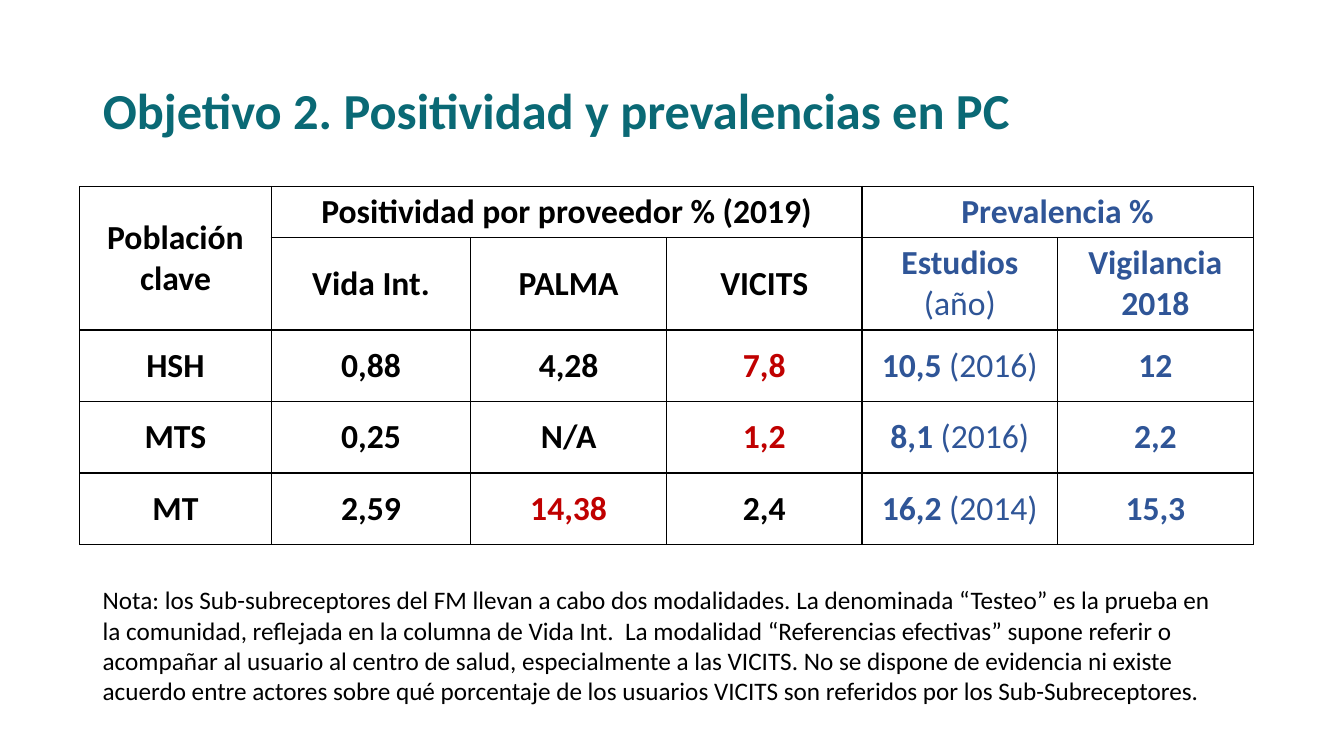
import dataclasses
import typing

import lxml.etree
import pptx
import pptx.dml.color
import pptx.enum.text
import pptx.oxml.ns
import pptx.util

PX = 9144  # EMU per px, 100 px to the inch
FONT = "Calibri"
TEAL = pptx.dml.color.RGBColor(0x0A, 0x69, 0x75)
BLACK = pptx.dml.color.RGBColor(0x00, 0x00, 0x00)
BLUE = pptx.dml.color.RGBColor(0x2F, 0x55, 0x97)
RED = pptx.dml.color.RGBColor(0xC0, 0x00, 0x00)

ALIGN = pptx.enum.text.PP_ALIGN
ANCHOR = pptx.enum.text.MSO_ANCHOR
AUTO_SIZE = pptx.enum.text.MSO_AUTO_SIZE

TITLE = "Objetivo 2. Positividad y prevalencias en PC"
NOTE = (
    "Nota: los Sub-subreceptores del FM llevan a cabo dos modalidades. "
    "La denominada “Testeo” es la prueba en la comunidad, reflejada en la "
    "columna de Vida Int.  La modalidad “Referencias efectivas” supone referir "
    "o acompañar al usuario al centro de salud, especialmente a las VICITS. "
    "No se dispone de evidencia ni existe acuerdo entre actores sobre qué "
    "porcentaje de los usuarios VICITS son referidos por los Sub-Subreceptores."
)
COL_WIDTHS = [190, 198, 194, 194, 194, 194]
ROW_HEIGHTS = [51, 91, 71, 71, 71]


@dataclasses.dataclass(frozen=True)
class Entry:
    """A table cell: bold text, then an optional regular-weight part."""
    row: int
    col: int
    bold: str
    color: pptx.dml.color.RGBColor = BLACK
    regular: str = ""
    rows: int = 1
    cols: int = 1


@dataclasses.dataclass(frozen=True)
class Population:
    name: str
    positivity: tuple[str, str, str]
    highest: int
    study: str
    year: str
    surveillance: str


HEADERS = [
    Entry(0, 0, "Población clave", rows=2),
    Entry(0, 1, "Positividad por proveedor % (2019)", cols=3),
    Entry(0, 4, "Prevalencia %", BLUE, cols=2),
    Entry(1, 1, "Vida Int."),
    Entry(1, 2, "PALMA"),
    Entry(1, 3, "VICITS"),
    Entry(1, 4, "Estudios ", BLUE, "(año)"),
    Entry(1, 5, "Vigilancia 2018", BLUE),
]
POPULATIONS = [
    Population("HSH", ("0,88", "4,28", "7,8"), 2, "10,5", "2016", "12"),
    Population("MTS", ("0,25", "N/A", "1,2"), 2, "8,1", "2016", "2,2"),
    Population("MT", ("2,59", "14,38", "2,4"), 1, "16,2", "2014", "15,3"),
]


def population_entries(row: int, pop: Population) -> typing.Iterator[Entry]:
    yield Entry(row, 0, pop.name)
    for i, value in enumerate(pop.positivity):
        yield Entry(row, i + 1, value, RED if i == pop.highest else BLACK)
    yield Entry(row, 4, f"{pop.study} ", BLUE, f"({pop.year})")
    yield Entry(row, 5, pop.surveillance, BLUE)


def set_attrs(target: typing.Any, attrs: dict[str, typing.Any]) -> None:
    for name, value in attrs.items():
        setattr(target, name, value)


def add_run(p: typing.Any, text: str, size: int,
            color: pptx.dml.color.RGBColor, bold: bool) -> None:
    r = p.add_run()
    r.text = text
    set_attrs(r.font, {"name": FONT, "size": pptx.util.Pt(size), "bold": bold})
    r.font.color.rgb = color


def place(sp: typing.Any, left: int, top: int, width: int, height: int) -> None:
    set_attrs(sp, {"left": left * PX, "top": top * PX,
                   "width": width * PX, "height": height * PX})


def add_borders(cell: typing.Any) -> None:
    qn = pptx.oxml.ns.qn
    props = cell._tc.get_or_add_tcPr()
    for i, side in enumerate(("lnL", "lnR", "lnT", "lnB")):
        line = lxml.etree.Element(qn(f"a:{side}"), w=str(pptx.util.Pt(1)))
        fill = lxml.etree.SubElement(line, qn("a:solidFill"))
        lxml.etree.SubElement(fill, qn("a:srgbClr"), val=str(BLACK))
        props.insert(i, line)


def fill_entry(table: typing.Any, entry: Entry) -> None:
    cell = table.cell(entry.row, entry.col)
    if entry.rows > 1 or entry.cols > 1:
        cell.merge(table.cell(entry.row + entry.rows - 1,
                              entry.col + entry.cols - 1))
    p = cell.text_frame.paragraphs[0]
    p.alignment = ALIGN.CENTER
    add_run(p, entry.bold, 24, entry.color, True)
    if entry.regular:
        add_run(p, entry.regular, 24, entry.color, False)


def add_title(s: typing.Any) -> None:
    sp = s.shapes.title
    place(sp, 92, 40, 1067, 145)
    set_attrs(sp.text_frame, {"vertical_anchor": ANCHOR.MIDDLE,
                              "word_wrap": True,
                              "auto_size": AUTO_SIZE.NONE})
    p = sp.text_frame.paragraphs[0]
    set_attrs(p, {"alignment": ALIGN.LEFT, "line_spacing": 0.9})
    add_run(p, TITLE, 36, TEAL, True)


def add_prevalence_table(s: typing.Any) -> None:
    frame = s.shapes.add_table(len(ROW_HEIGHTS), len(COL_WIDTHS), 79 * PX, 185 * PX,
                               sum(COL_WIDTHS) * PX, sum(ROW_HEIGHTS) * PX)
    table = frame.table
    set_attrs(table, {"first_row": False, "horz_banding": False})
    for column, width in zip(table.columns, COL_WIDTHS):
        column.width = width * PX
    for row, height in zip(table.rows, ROW_HEIGHTS):
        row.height = height * PX
    for cell in table.iter_cells():
        cell.fill.background()
        cell.vertical_anchor = ANCHOR.MIDDLE
        add_borders(cell)
    for entry in HEADERS:
        fill_entry(table, entry)
    for row, pop in enumerate(POPULATIONS, start=2):
        for entry in population_entries(row, pop):
            fill_entry(table, entry)


def add_note(s: typing.Any) -> None:
    sp = s.shapes.add_textbox(0, 0, 0, 0)
    place(sp, 92, 575, 1136, 131)
    set_attrs(sp.text_frame, {"word_wrap": True,
                              "auto_size": AUTO_SIZE.SHAPE_TO_FIT_TEXT})
    add_run(sp.text_frame.paragraphs[0], NOTE, 18, BLACK, False)


def main() -> None:
    prs = pptx.Presentation()
    set_attrs(prs, {"slide_width": 1333 * PX, "slide_height": 750 * PX})
    s = prs.slides.add_slide(prs.slide_layouts.get_by_name("Title Only"))
    add_title(s)
    add_prevalence_table(s)
    add_note(s)
    prs.save("out.pptx")


if __name__ == "__main__":
    main()
